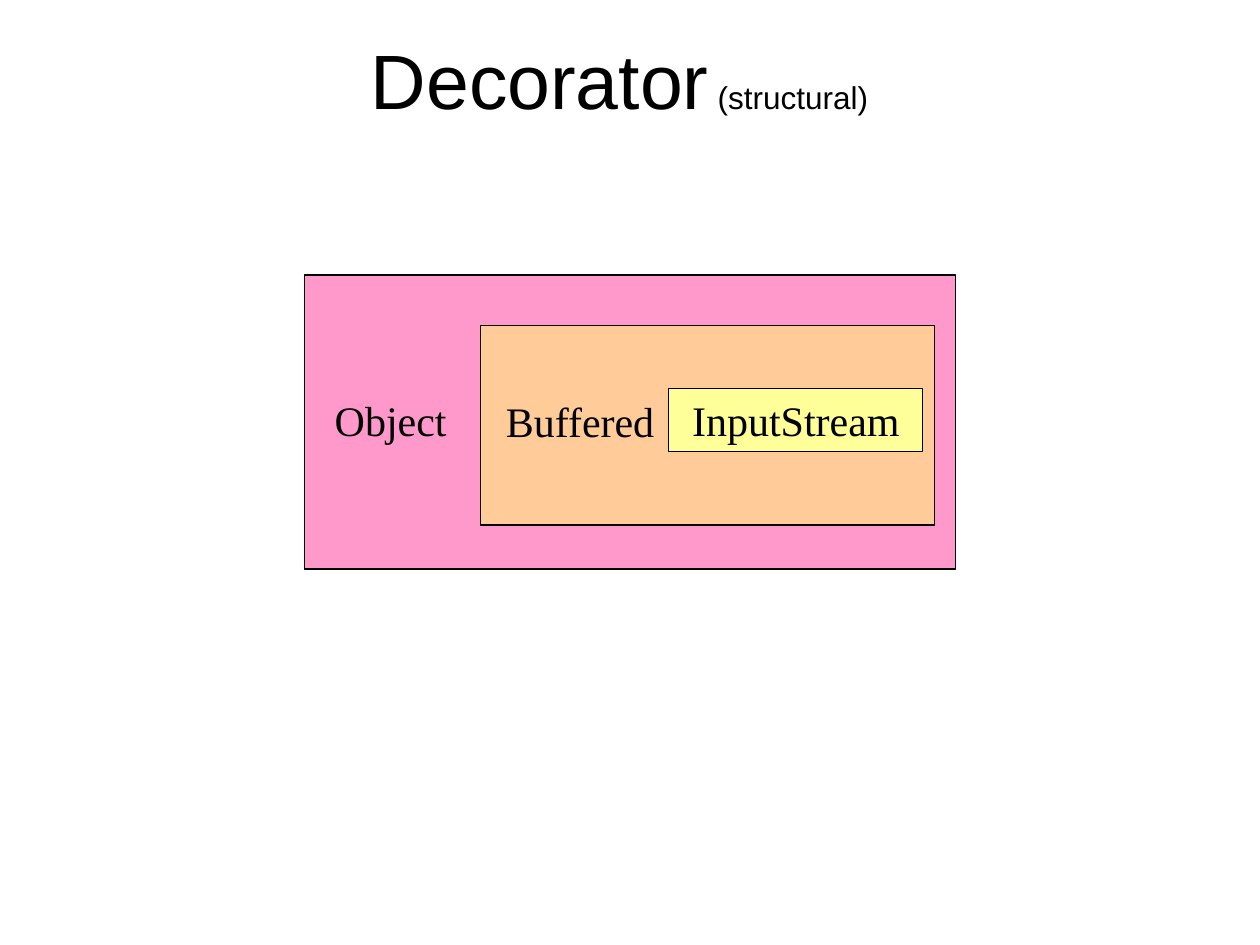
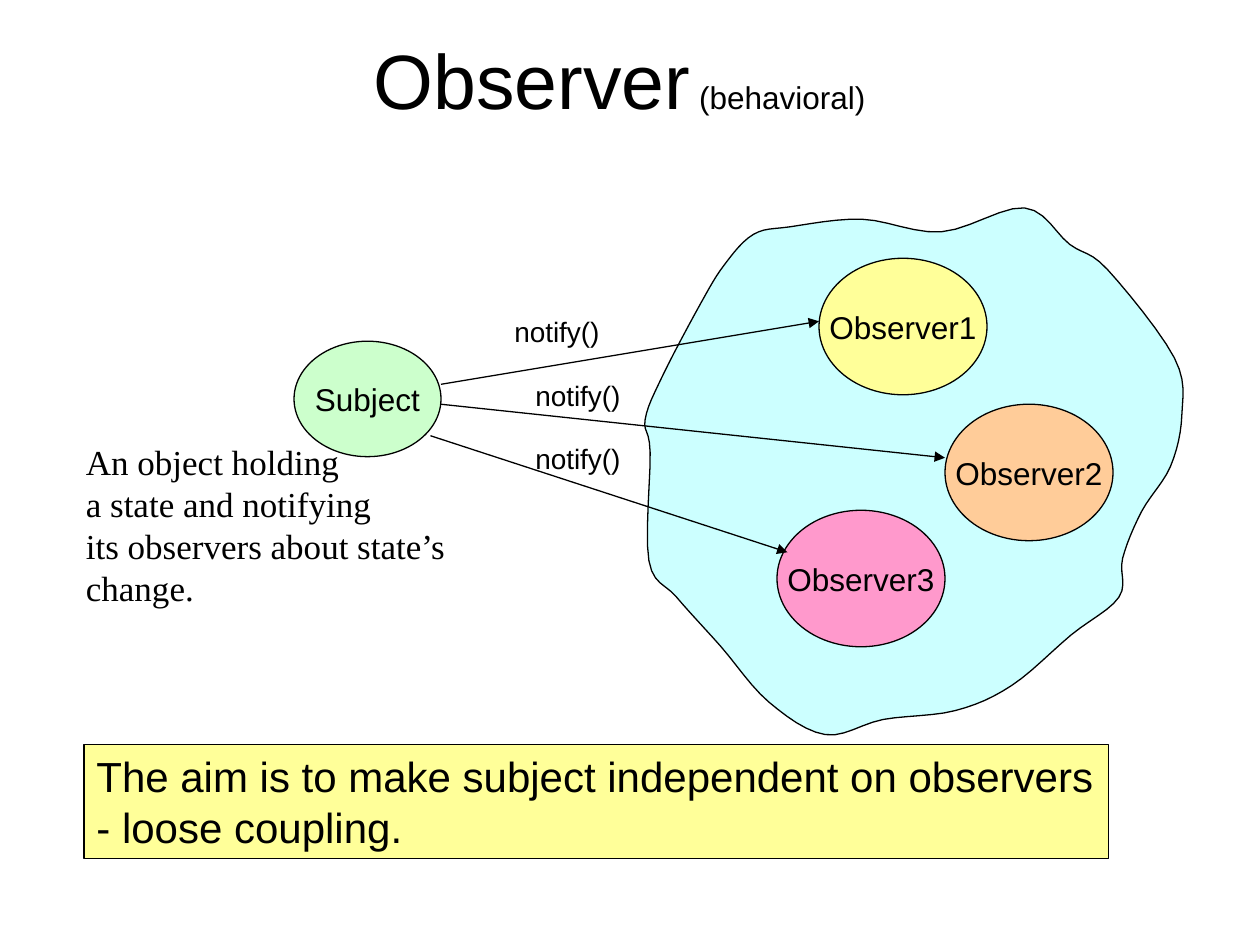
from lxml import etree
from pptx import Presentation
from pptx import util as u
from pptx.dml.color import RGBColor
from pptx.enum import shapes, text
from pptx.oxml import ns

BLACK = RGBColor(0x00, 0x00, 0x00)
PINK = RGBColor(0xFF, 0x99, 0xCC)
ORANGE = RGBColor(0xFF, 0xCC, 0x99)
YELLOW = RGBColor(0xFF, 0xFF, 0x99)
GREEN = RGBColor(0xCC, 0xFF, 0xCC)
CYAN = RGBColor(0xCC, 0xFF, 0xFF)
SANS = "Arial"
SERIF = "Times New Roman"

WIDTH = u.Inches(10)
HEIGHT = u.Inches(7.5)
COLUMNS = 120
CELL = WIDTH / COLUMNS
CLOUD_UNIT = WIDTH / 1000
CURVE_STEPS = 6

CLOUD_EDGE = [
    (598, 186), (575, 210), (556, 241), (526, 298), (512, 333), (516, 359),
    (515, 445), (537, 474), (572, 513), (610, 557), (655, 583), (701, 571),
    (758, 564), (803, 544), (850, 504), (888, 474), (891, 443), (906, 406),
    (929, 370), (938, 329), (932, 284), (879, 214), (849, 194), (813, 165),
    (747, 184), (684, 174), (627, 180),
]


def grid(*cells):
    return [u.Emu(round(cell * CELL)) for cell in cells]


def paint(shape, fill):
    shape.shadow.inherit = False
    shape.fill.solid()
    shape.fill.fore_color.rgb = fill
    shape.line.color.rgb = BLACK
    shape.line.width = u.Pt(0.75)


def style(para, font, size, align):
    para.alignment = align
    para.font.name = font
    para.font.size = u.Pt(size)
    para.font.color.rgb = BLACK


def write(box, lines, font, size, align=text.PP_ALIGN.LEFT,
          anchor=text.MSO_ANCHOR.TOP, before=0):
    frame = box.text_frame
    frame.word_wrap = False
    frame.vertical_anchor = anchor
    frame.text = "\n".join(lines)
    for para in frame.paragraphs:
        style(para, font, size, align)
        para.space_before = u.Pt(before)


def add_label(page, place, lines, font, size, before=0):
    box = page.shapes.add_textbox(*grid(*place))
    write(box, lines, font, size, before=before)


def add_block(page, place, fill, preset=shapes.MSO_SHAPE.RECTANGLE):
    block = page.shapes.add_shape(preset, *grid(*place))
    paint(block, fill)
    return block


def add_node(page, place, fill, name):
    node = add_block(page, place, fill, shapes.MSO_SHAPE.OVAL)
    write(node, [name], SANS, 18, text.PP_ALIGN.CENTER, text.MSO_ANCHOR.MIDDLE)


def add_arrow(page, start, end):
    arrow = page.shapes.add_connector(
        shapes.MSO_CONNECTOR.STRAIGHT, *grid(*start, *end))
    arrow.line.color.rgb = BLACK
    arrow.line.width = u.Pt(0.75)
    line = arrow.line._get_or_add_ln()
    etree.SubElement(line, ns.qn("a:tailEnd"), type="triangle")
    etree.SubElement(arrow._element.spPr, ns.qn("a:effectLst"))


def blend(before, start, end, after, t):
    return (start + t * (end - before) / 2
            + t ** 2 * (2 * before - 5 * start + 4 * end - after) / 2
            + t ** 3 * (3 * start - before - 3 * end + after) / 2)


def smooth_outline(corners):
    count = len(corners)
    points = []
    for index in range(count):
        nearby = [corners[(index + shift) % count] for shift in (-1, 0, 1, 2)]
        for step in range(CURVE_STEPS):
            points.append([blend(*values, step / CURVE_STEPS) * CLOUD_UNIT
                           for values in zip(*nearby)])
    return points


def add_cloud(page):
    first, *others = smooth_outline(CLOUD_EDGE)
    builder = page.shapes.build_freeform(*first, scale=1.0)
    builder.add_line_segments(others, close=True)
    paint(builder.convert_to_shape(), CYAN)


def add_page(deck, pattern, category):
    page = deck.slides.add_slide(deck.slide_layouts[6])
    box = page.shapes.add_textbox(*grid(8, 0, 102, 15))
    frame = box.text_frame
    frame.word_wrap = True
    frame.vertical_anchor = text.MSO_ANCHOR.MIDDLE
    para = frame.paragraphs[0]
    style(para, SANS, 44, text.PP_ALIGN.CENTER)
    para.add_run().text = pattern
    span = para.add_run()
    span.text = f" ({category})"
    span.font.size = u.Pt(18)
    return page


def build_decorator(deck):
    page = add_page(deck, "Decorator", "structural")
    add_block(page, (29, 26.2, 62, 28), PINK)
    add_label(page, (30.7, 37, 19, 6), ["Object"], SERIF, 24, before=3)
    add_block(page, (45.8, 31, 43.2, 19), ORANGE)
    stream = add_block(page, (63.7, 37, 24.2, 6), YELLOW)
    write(stream, ["InputStream"], SERIF, 24, text.PP_ALIGN.CENTER, before=3)
    add_label(page, (47, 37.1, 19, 6), ["Buffered"], SERIF, 24, before=3)


def build_observer(deck):
    page = add_page(deck, "Observer", "behavioral")
    add_cloud(page)
    add_node(page, (28, 32.5, 14, 11), GREEN, "Subject")
    observers = [(78, 24.6, YELLOW), (90, 38.5, ORANGE), (74, 48.6, PINK)]
    for number, (left, top, fill) in enumerate(observers, 1):
        add_node(page, (left, top, 16, 13), fill, f"Observer{number}")
    notifications = [
        ((42, 36.6), (78, 30.6), (47.8, 29.4)),
        ((42, 38.5), (90, 43.6), (49.8, 35.5)),
        ((41, 41.5), (75, 52.6), (49.8, 41.5)),
    ]
    for start, end, corner in notifications:
        add_arrow(page, start, end)
        add_label(page, (*corner, 10.6, 4.4), ["notify()"], SANS, 16)
    add_label(page, (7, 41.4, 36.7, 17.2), [
        "An object holding", "a state and notifying",
        "its observers about state’s", "change."], SERIF, 20)
    aim = add_block(page, (8, 70.9, 97.6, 10.9), YELLOW)
    write(aim, ["The aim is to make subject independent on observers",
                "- loose coupling."], SANS, 24)


def main():
    deck = Presentation()
    deck.slide_width, deck.slide_height = WIDTH, HEIGHT
    build_decorator(deck)
    build_observer(deck)
    deck.save("out.pptx")


if __name__ == "__main__":
    main()
